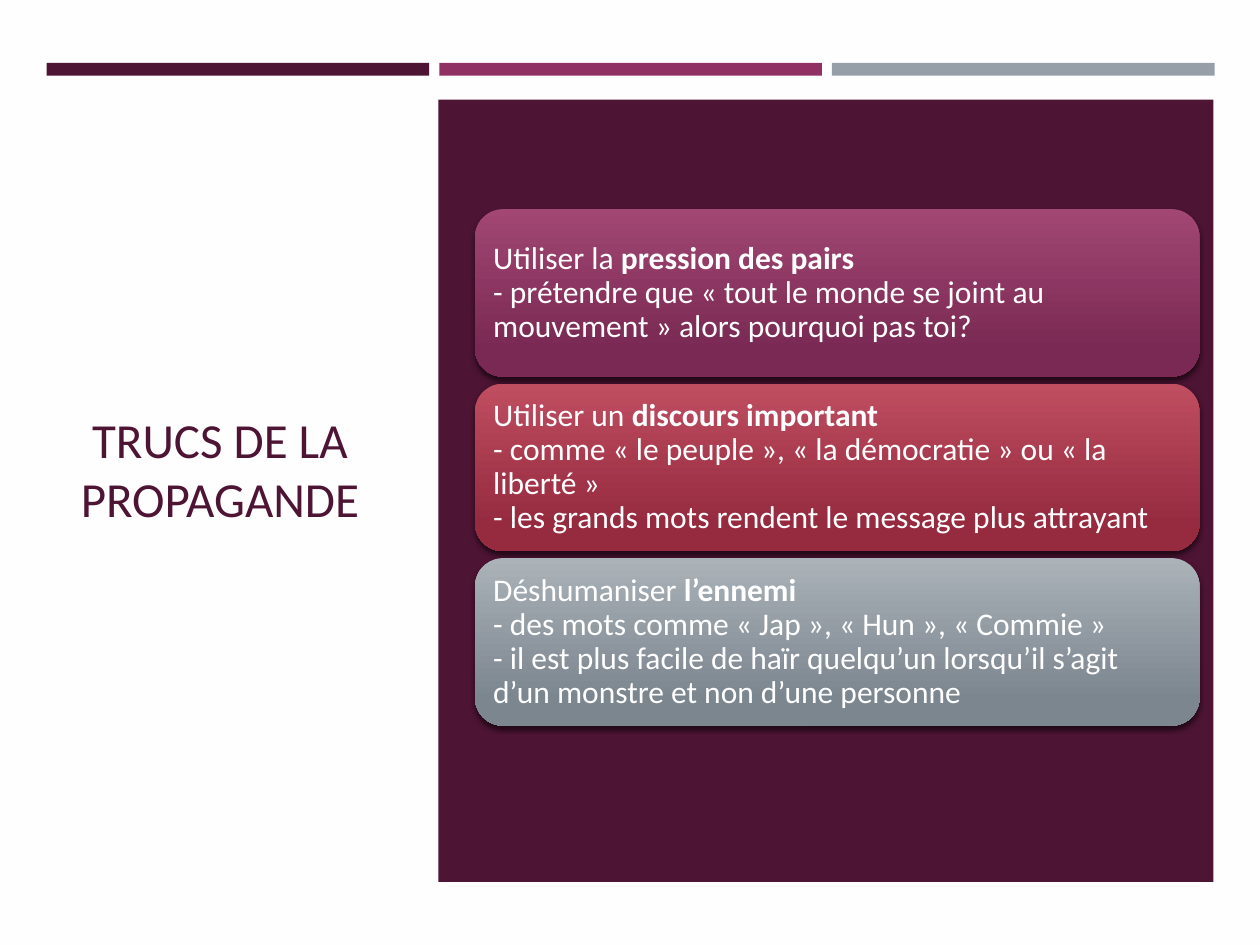
from lxml import etree
from pptx import Presentation
from pptx.dml.color import RGBColor
from pptx.enum.shapes import MSO_SHAPE
from pptx.enum.text import MSO_ANCHOR, MSO_AUTO_SIZE, PP_ALIGN
from pptx.oxml.ns import qn
from pptx.util import Inches, Pt

RECT, ROUND = MSO_SHAPE.RECTANGLE, MSO_SHAPE.ROUNDED_RECTANGLE
MIDDLE, NO_FIT = MSO_ANCHOR.MIDDLE, MSO_AUTO_SIZE.NONE
LEFT, CENTER = PP_ALIGN.LEFT, PP_ALIGN.CENTER

PAPER = RGBColor(0xFF, 0xFE, 0xFF)
WHITE = RGBColor(0xFF, 0xFF, 0xFF)
PLUM = RGBColor(0x4D, 0x14, 0x34)
BERRY = RGBColor(0x90, 0x31, 0x63)
GREY = RGBColor(0x96, 0x9F, 0xA7)
PINK_TOP, PINK_END = RGBColor(0xA2, 0x47, 0x74), RGBColor(0x79, 0x29, 0x53)
RED_TOP, RED_END = RGBColor(0xBF, 0x4E, 0x61), RGBColor(0x96, 0x2A, 0x3F)
GREY_TOP, GREY_END = RGBColor(0xAB, 0xB2, 0xB8), RGBColor(0x7C, 0x86, 0x8F)

FONT = "Calibri"
CARDS = [
    (PINK_TOP, PINK_END, "Utiliser la ", "pression des pairs",
     ["- prétendre que « tout le monde se joint au mouvement » "
      "alors pourquoi pas toi?"]),
    (RED_TOP, RED_END, "Utiliser un ", "discours important",
     ["- comme « le peuple », « la démocratie » ou « la liberté »",
      "- les grands mots rendent le message plus attrayant"]),
    (GREY_TOP, GREY_END, "Déshumaniser ", "l’ennemi",
     ["- des mots comme « Jap », « Hun », « Commie »",
      "- il est plus facile de haïr quelqu’un lorsqu’il s’agit "
      "d’un monstre et non d’une personne"]),
]


def add_box(slide, kind, box):
    shape = slide.shapes.add_shape(kind, *map(Inches, box))
    shape.shadow.inherit = False
    shape.line.fill.background()
    return shape


def add_block(slide, box, color):
    shape = add_box(slide, RECT, box)
    shape.fill.solid()
    shape.fill.fore_color.rgb = color


def add_shade(shape):
    effects = shape._element.spPr.find(qn("a:effectLst"))
    shade = etree.SubElement(
        effects, qn("a:outerShdw"), blurRad=str(Pt(3)), dist=str(Pt(2)),
        dir="5400000", algn="ctr", rotWithShape="0")
    color = etree.SubElement(shade, qn("a:srgbClr"), val="000000")
    etree.SubElement(color, qn("a:alpha"), val="55000")


def add_title(slide, box):
    title = slide.shapes.title
    title.left, title.top, title.width, title.height = map(Inches, box)
    frame = title.text_frame
    frame.text = "TRUCS DE LA PROPAGANDE"
    frame.word_wrap = True
    frame.auto_size = NO_FIT
    frame.vertical_anchor = MIDDLE
    para = frame.paragraphs[0]
    para.alignment = CENTER
    para.space_after = Pt(6)
    font = para.runs[0].font
    font.name, font.size, font.color.rgb = FONT, Pt(28), PLUM


def add_bars(slide, box):
    left, top, width, height = box
    gap = 0.08
    size = (width - 2 * gap) / 3
    for col, color in enumerate((PLUM, BERRY, GREY)):
        add_block(slide, (left + col * (size + gap), top, size, height), color)


def add_card(slide, box, card):
    start, end, lead, key, lines = card
    shape = add_box(slide, ROUND, box)
    add_shade(shape)
    shape.fill.gradient()
    shape.fill.gradient_angle = 270
    for stop, color, place in zip(shape.fill.gradient_stops,
                                  (start, end), (0, 0.84)):
        stop.color.rgb, stop.position = color, place
    frame = shape.text_frame
    frame.word_wrap = True
    frame.vertical_anchor = MIDDLE
    frame.margin_left = frame.margin_right = Inches(0.08)
    frame.margin_top = frame.margin_bottom = Inches(0.08)
    para = frame.paragraphs[0]
    para.alignment = LEFT
    para.line_spacing = 0.9
    for text in (lead, key):
        para.add_run().text = text
    for text in lines:
        para.add_line_break()
        para.add_run().text = text
    for run in para.runs:
        font = run.font
        font.name, font.size, font.color.rgb = FONT, Pt(18), WHITE
        font.bold = run.text == key


def add_panel(slide, box):
    left, top, width, height = box
    add_block(slide, box, PLUM)
    tall, gap = 1.33, 0.055
    count = len(CARDS)
    first = top + 0.87
    for row, card in enumerate(CARDS):
        spot = (left + 0.29, first + row * (tall + gap), width - 0.4, tall)
        add_card(slide, spot, card)


def main():
    deck = Presentation()
    deck.slide_width, deck.slide_height = Inches(10), Inches(7.5)
    slide = deck.slides.add_slide(deck.slide_layouts[5])
    back = slide.background.fill
    back.solid()
    back.fore_color.rgb = PAPER
    add_title(slide, (0.37, 1.14, 2.75, 5.15))
    add_bars(slide, (0.37, 0.5, 9.27, 0.1))
    add_panel(slide, (3.48, 0.79, 6.15, 6.21))
    deck.save("out.pptx")


if __name__ == "__main__":
    main()
